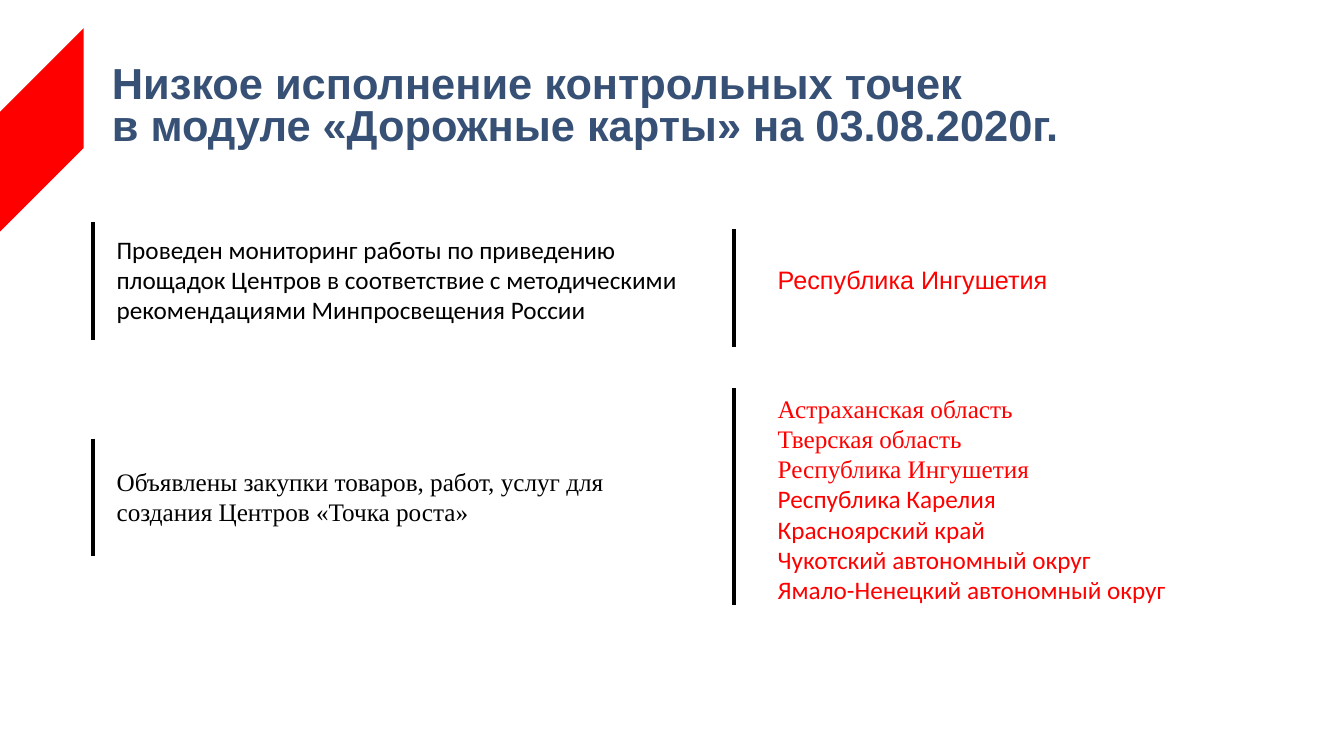
from pptx import Presentation
from pptx.dml.color import RGBColor
from pptx.enum.shapes import MSO_CONNECTOR
from pptx.enum.text import MSO_ANCHOR
from pptx.oxml.ns import qn
from pptx.util import Cm, Pt
from lxml.etree import SubElement

RED = RGBColor(0xFF, 0x00, 0x00)
BLACK = RGBColor(0x00, 0x00, 0x00)
NAVY = RGBColor(0x37, 0x50, 0x75)
SERIF = "Times New Roman"

TITLE = "Низкое исполнение контрольных точек\vв модуле «Дорожные карты» на 03.08.2020г."
MONITORING = ("Проведен мониторинг работы по приведению площадок Центров "
              "в соответствие с методическими рекомендациями Минпросвещения России")
PURCHASES = "Объявлены закупки товаров, работ, услуг для создания Центров «Точка роста»"
REGIONS = [
    ("Астраханская область", SERIF),
    ("Тверская область", SERIF),
    ("Республика Ингушетия", SERIF),
    ("Республика Карелия", "Calibri"),
    ("Красноярский край", "Calibri"),
    ("Чукотский автономный округ", "Calibri"),
    ("Ямало-Ненецкий автономный округ", "Calibri"),
]


def set_attrs(obj, values):
    """Set each attribute of an object from a dict."""
    for name, value in values.items():
        setattr(obj, name, value)


def add_text(slide, box, lines, color, size=18, bold=False, **frame):
    """Add a wrapped text box with one paragraph per (text, font) pair."""
    tf = slide.shapes.add_textbox(*map(Cm, box)).text_frame
    set_attrs(tf, {"word_wrap": True, **frame})
    for i, (text, font) in enumerate(lines):
        p = tf.add_paragraph() if i else tf.paragraphs[0]
        p.text = text
        for r in p.runs:
            set_attrs(r.font, {"name": font, "size": Pt(size), "bold": bold})
            r.font.color.rgb = color
    return tf


def add_ribbon(slide, box):
    """Draw the red slanted ribbon filling the given box."""
    x, y, w, h = box
    slant = 2.11
    builder = slide.shapes.build_freeform(Cm(x), Cm(y + slant))
    builder.add_line_segments([(Cm(x + w), Cm(y)), (Cm(x + w), Cm(y + h - slant)),
                               (Cm(x), Cm(y + h))])
    sp = builder.convert_to_shape()
    sp.shadow.inherit = False
    sp.fill.solid()
    sp.fill.fore_color.rgb = RED
    sp.line.fill.background()


def add_title(slide, box):
    """Place the two-line heading in the given box."""
    tf = add_text(slide, box, [(TITLE, "Arial")], NAVY, 31, True,
                  vertical_anchor=MSO_ANCHOR.MIDDLE, margin_left=Cm(0.13),
                  margin_right=Cm(0.13), margin_top=Cm(0.13), margin_bottom=Cm(1.14))
    tf.paragraphs[0].line_spacing = 0.8


def add_entry(slide, box, indent, drop, lines, color):
    """Draw a bar on the left side of the box and text beside it."""
    x, y, w, h = box
    bar = slide.shapes.add_connector(MSO_CONNECTOR.STRAIGHT, Cm(x), Cm(y), Cm(x), Cm(y + h))
    bar.line.color.rgb = BLACK
    bar.line.width = Pt(3)
    SubElement(bar._element.spPr, qn("a:effectLst"))
    add_text(slide, (x + indent, y + drop, w - indent, h - drop), lines, color)


def main():
    """Build and save the slide."""
    prs = Presentation()
    set_attrs(prs, {"slide_width": Cm(33.87), "slide_height": Cm(19.05)})
    slide = prs.slides.add_slide(prs.slide_layouts[6])
    add_ribbon(slide, (0, 0.71, 2.11, 5.13))
    add_title(slide, (2.69, 1.19, 26.16, 4.06))

    left, right = 2.34, 18.49
    entries = [
        ((left, 5.59, 15.46, 2.97), 0.35, 0.18, [(MONITORING, "Calibri")], BLACK),
        ((right, 5.77, 11.5, 2.97), 0.86, 0.76, [("Республика Ингушетия", "Arial")], RED),
        ((left, 11.05, 13.71, 2.97), 0.35, 0.58, [(PURCHASES, SERIF)], BLACK),
        ((right, 9.78, 12.65, 5.46), 0.86, 0, REGIONS, RED),
    ]
    for entry in entries:
        add_entry(slide, *entry)
    prs.save("out.pptx")


if __name__ == "__main__":
    main()
